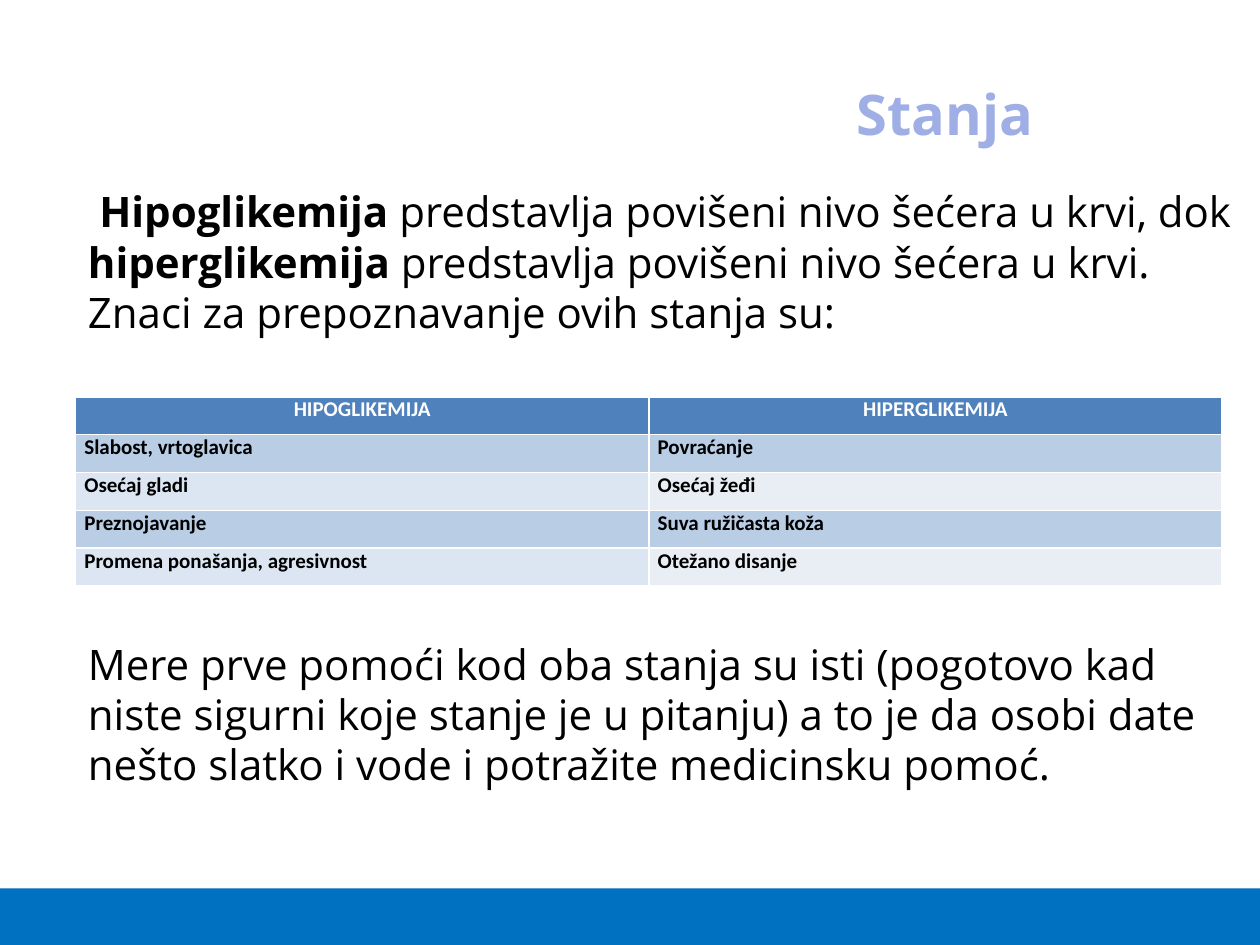
from pptx import Presentation
from pptx.dml.color import RGBColor
from pptx.enum.shapes import MSO_SHAPE
from pptx.enum.text import MSO_ANCHOR, PP_ALIGN
from pptx.util import Inches, Pt

WHITE = RGBColor(0xFF, 0xFF, 0xFF)
BLACK = RGBColor(0, 0, 0)
BLUE = RGBColor(0x00, 0x70, 0xC0)
LILAC = RGBColor(0x9F, 0xAE, 0xE5)
HEAD = RGBColor(0x4F, 0x81, 0xBD)
BAND = RGBColor(0xB9, 0xCD, 0xE5)
PALE = RGBColor(0xDC, 0xE6, 0xF2)
GREY = RGBColor(0xE9, 0xED, 0xF4)

SIGNS = [
    ("HIPOGLIKEMIJA", "HIPERGLIKEMIJA"),
    ("Slabost, vrtoglavica", "Povraćanje"),
    ("Osećaj gladi", "Osećaj žeđi"),
    ("Preznojavanje", "Suva ružičasta koža"),
    ("Promena ponašanja, agresivnost", "Otežano disanje"),
]
INTRO = [
    ("Hipoglikemija ", True),
    ("predstavlja povišeni nivo šećera u krvi, dok ", False),
    ("hiperglikemija ", True),
    ("predstavlja povišeni nivo šećera u krvi. "
     "Znaci za prepoznavanje ovih stanja su:", False),
]
AID = [("Mere prve pomoći kod oba stanja su isti (pogotovo kad niste sigurni "
        "koje stanje je u pitanju) a to je da osobi date nešto slatko i vode "
        "i potražite medicinsku pomoć.", False)]


class Deck:
    face = "Open Sans"
    cell_face = "Calibri"

    def __init__(self, wide, high):
        self.prs = Presentation()
        self.prs.slide_width = Inches(wide)
        self.prs.slide_height = Inches(high)
        self.slide = self.prs.slides.add_slide(self.prs.slide_layouts[5])

    def box(self, x, y, w, h):
        """Turn shares of the slide's size into lengths."""
        wide, high = self.prs.slide_width, self.prs.slide_height
        return int(x * wide), int(y * high), int(w * wide), int(h * high)

    def style(self, font, face, size, color, bold):
        font.name, font.size, font.bold = face, Pt(size), bold
        font.color.rgb = color

    def bar(self, area, color):
        bar = self.slide.shapes.add_shape(MSO_SHAPE.RECTANGLE, *self.box(*area))
        bar.shadow.inherit = False
        bar.fill.solid()
        bar.fill.fore_color.rgb = color
        bar.line.fill.background()

    def title(self, area, text):
        head = self.slide.shapes.title
        head.left, head.top, head.width, head.height = self.box(*area)
        frame = head.text_frame
        frame.text = text
        frame.vertical_anchor = MSO_ANCHOR.MIDDLE
        para = frame.paragraphs[0]
        para.alignment = PP_ALIGN.CENTER
        self.style(para.runs[0].font, self.face, 32, LILAC, True)

    def prose(self, area, parts, gap, indent):
        """Write paragraphs of (text, bold) runs, with a gap between them."""
        frame = self.slide.shapes.add_textbox(*self.box(*area)).text_frame
        frame.word_wrap = True
        for i, part in enumerate(parts):
            para = frame.add_paragraph() if i else frame.paragraphs[0]
            if i:
                para.space_before = Pt(gap)
            else:
                para._p.get_or_add_pPr().set("indent", str(Inches(indent)))
            for text, bold in part:
                run = para.add_run()
                run.text = text
                self.style(run.font, self.face, 24, BLACK, bold)

    def table(self, area, rows):
        grid = self.slide.shapes.add_table(
            len(rows), len(rows[0]), *self.box(*area)).table
        for r, row in enumerate(rows):
            for c, text in enumerate(row):
                self.cell(grid.cell(r, c), text, r, c)

    def cell(self, cell, text, r, c):
        cell.margin_left = cell.margin_right = Inches(0.07)
        cell.margin_top = cell.margin_bottom = 0
        cell.fill.solid()
        cell.fill.fore_color.rgb = (
            HEAD if r == 0 else BAND if r % 2 else (PALE, GREY)[c])
        cell.text_frame.text = text
        para = cell.text_frame.paragraphs[0]
        para.alignment = PP_ALIGN.LEFT if r else PP_ALIGN.CENTER
        self.style(para.runs[0].font, self.cell_face, 12,
                   BLACK if r else WHITE, True)


def main():
    deck = Deck(10, 7.5)
    deck.bar((0, 0.94, 1, 0.06), BLUE)
    deck.title((0.52, 0.07, 0.46, 0.1), "Stanja")
    deck.table((0.06, 0.42, 0.91, 0.2), SIGNS)
    deck.prose((0.06, 0.19, 0.93, 0.66), (INTRO, AID), gap=172, indent=0.09)
    deck.prs.save("out.pptx")


if __name__ == "__main__":
    main()
